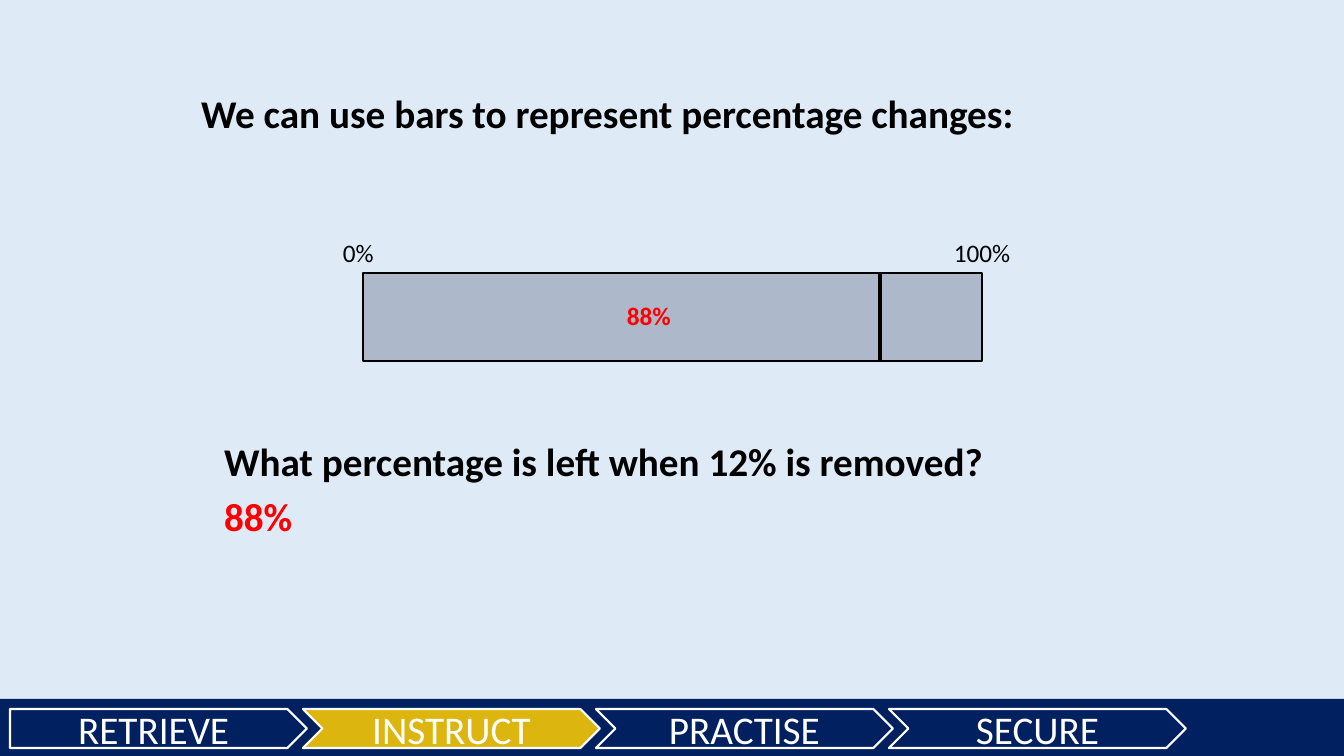
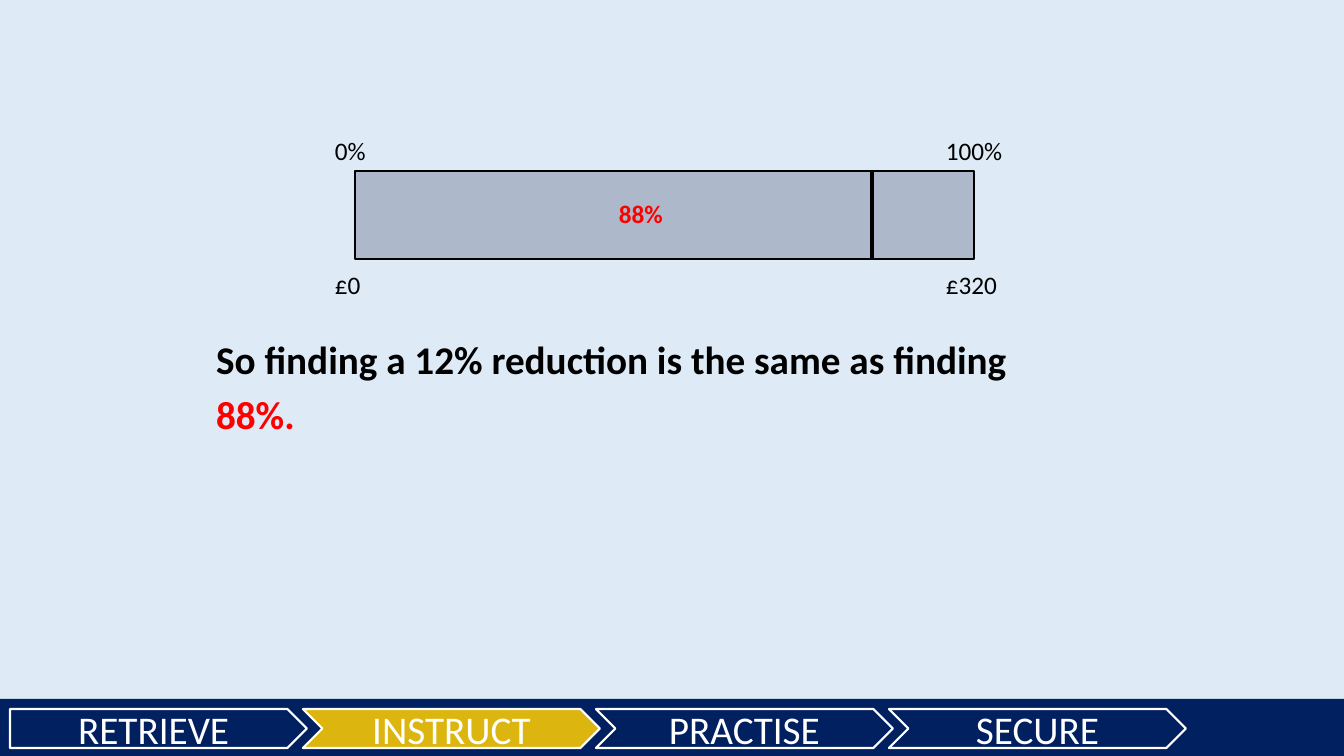
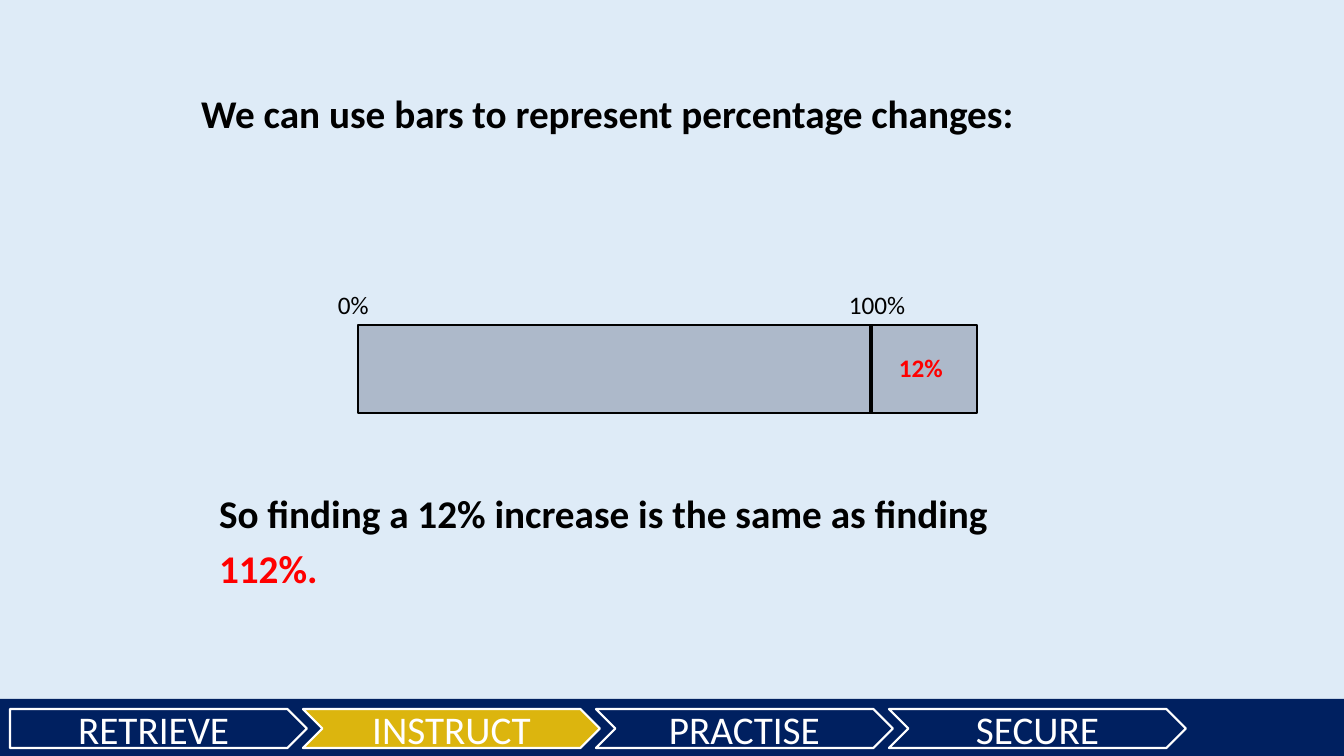
import pptx
import pptx.dml.color
import pptx.enum.shapes
import pptx.enum.text
import pptx.oxml.ns
import pptx.util
from lxml import etree

PX = 914400 / 100.8
SLIDE_WIDTH, SLIDE_HEIGHT = 1344, 756
FONT = "Calibri"
COLOURS = {
    "background": "DEEBF7",
    "navy": "002060",
    "gold": "DCB50E",
    "bar": "ADB9CA",
    "text": "000000",
    "answer": "FF0000",
    "white": "FFFFFF",
}
STAGES = ["RETRIEVE", "INSTRUCT", "PRACTISE", "SECURE"]
CURRENT_STAGE = "INSTRUCT"
HEADING = "We can use bars to represent percentage changes:"
SHAPE = pptx.enum.shapes.MSO_SHAPE
ALIGN = pptx.enum.text.PP_ALIGN
ANCHOR = pptx.enum.text.MSO_ANCHOR

SLIDES = [
    {
        "heading": HEADING,
        "bar": (363, 273),
        "divider": 517,
        "labels": [("0%", -30, -41), ("100%", 581, -41)],
        "part": ("88%", 254),
        "statement": ["What percentage is left when 12% is removed?", "88%"],
    },
    {
        "heading": None,
        "bar": (355, 171),
        "divider": 517,
        "labels": [("0%", -30, -41), ("100%", 581, -41), ("£0", -30, 93), ("£320", 581, 93)],
        "part": ("88%", 254),
        "statement": ["So finding a 12% reduction is the same as finding", "88%."],
    },
    {
        "heading": HEADING,
        "bar": (358, 325),
        "divider": 513,
        "labels": [("0%", -30, -41), ("100%", 481, -41)],
        "part": ("12%", 531),
        "statement": ["So finding a 12% increase is the same as finding", "112%."],
    },
]


def emu(*lengths):
    """Turn px lengths into EMU."""
    return [pptx.util.Emu(round(length * PX)) for length in lengths]


def rgb(colour):
    """Look up a named colour."""
    return pptx.dml.color.RGBColor.from_string(COLOURS[colour])


def add_run(paragraph, text, size, colour, bold=False):
    """Add one formatted run."""
    run = paragraph.add_run()
    run.text = text
    run.font.name = FONT
    run.font.size = pptx.util.Pt(size)
    run.font.bold = bold
    run.font.color.rgb = rgb(colour)


def add_panel(shapes, kind, box, fill, line=None, width=1):
    """Add a flat filled preset shape."""
    panel = shapes.add_shape(kind, *emu(*box))
    panel.shadow.inherit = False
    panel.fill.solid()
    panel.fill.fore_color.rgb = rgb(fill)
    if line:
        panel.line.color.rgb = rgb(line)
        panel.line.width = pptx.util.Pt(width)
    else:
        panel.line.fill.background()
    return panel


def add_label(shapes, text, box, colour="text", bold=False, wrap=True):
    """Add a small label of the bar."""
    frame = shapes.add_textbox(*emu(*box)).text_frame
    frame.word_wrap = wrap
    add_run(frame.paragraphs[0], text, 18, colour, bold)


def fill_placeholder(placeholder, box, lines):
    """Move a placeholder and write bold lines of (text, colour) in it."""
    placeholder.left, placeholder.top, placeholder.width, placeholder.height = emu(*box)
    frame = placeholder.text_frame
    frame.word_wrap = True
    frame.auto_size = pptx.enum.text.MSO_AUTO_SIZE.NONE
    frame.vertical_anchor = ANCHOR.TOP
    for index, (text, colour) in enumerate(lines):
        paragraph = frame.add_paragraph() if index else frame.paragraphs[0]
        properties = paragraph._p.get_or_add_pPr()
        properties.set("marL", "0")
        properties.set("indent", "0")
        etree.SubElement(properties, pptx.oxml.ns.qn("a:buNone"))
        paragraph.alignment = ALIGN.LEFT
        paragraph.space_before = pptx.util.Pt(5.6 if index else 0)
        add_run(paragraph, text, 28, colour, True)


def add_stage_band(shapes, left, top, width, height):
    """Add the footer band with its lesson stages."""
    parts = [add_panel(shapes, SHAPE.RECTANGLE, (left, top, width, height), "navy")]
    for index, stage in enumerate(STAGES):
        arrow = add_panel(
            shapes,
            SHAPE.CHEVRON if index else SHAPE.PENTAGON,
            (left + 10 + index * 293, top + 10, 297, 39),
            "gold" if stage == CURRENT_STAGE else "navy",
            "white",
            1.5,
        )
        arrow.text_frame.vertical_anchor = ANCHOR.MIDDLE
        paragraph = arrow.text_frame.paragraphs[0]
        paragraph.alignment = ALIGN.CENTER
        add_run(paragraph, stage, 28, "white")
        parts.append(arrow)
    return parts


def style_master(prs, slide):
    """Give the master the background and the stage band."""
    master = prs.slide_master
    master.background.fill.solid()
    master.background.fill.fore_color.rgb = rgb("background")
    parts = add_stage_band(slide.shapes, 0, 699, SLIDE_WIDTH, 57)
    for number, part in enumerate(parts, 101):
        part.element.xpath("./p:nvSpPr/p:cNvPr")[0].set("id", str(number))
        master.element.cSld.spTree.append(part.element)


def add_percentage_bar(shapes, left, top, content):
    """Add the divided bar with the labels around it."""
    width, height = 619, 88
    add_panel(shapes, SHAPE.RECTANGLE, (left, top, width, height), "bar", "text")
    for text, across, down in content["labels"]:
        add_label(shapes, text, (left + across, top + down, 88, 40))
    split = left + content["divider"]
    divider = shapes.add_connector(
        pptx.enum.shapes.MSO_CONNECTOR.STRAIGHT, *emu(split, top, split, top + height)
    )
    divider.line.color.rgb = rgb("text")
    divider.line.width = pptx.util.Pt(2.25)
    etree.SubElement(divider.element.spPr, pptx.oxml.ns.qn("a:effectLst"))
    text, across = content["part"]
    add_label(shapes, text, (left + across, top + 22, 74, 40), "answer", True, False)


def fill_slide(slide, content):
    """Place the heading, bar and statement of one slide."""
    title, body = slide.placeholders
    if content["heading"]:
        fill_placeholder(title, (191, 84, 954, 158), [(content["heading"], "text")])
    else:
        title.element.getparent().remove(title.element)
    left, top = content["bar"]
    add_percentage_bar(slide.shapes, left, top, content)
    lines = zip(content["statement"], ["text", "answer"])
    fill_placeholder(body, (left - 149, top + 159, 954, 158), lines)


def main():
    """Build and save the slides."""
    prs = pptx.Presentation()
    prs.slide_width, prs.slide_height = emu(SLIDE_WIDTH, SLIDE_HEIGHT)
    for index, content in enumerate(SLIDES):
        slide = prs.slides.add_slide(prs.slide_layouts[1])
        if index == 0:
            style_master(prs, slide)
        fill_slide(slide, content)
    prs.save("out.pptx")


if __name__ == "__main__":
    main()
